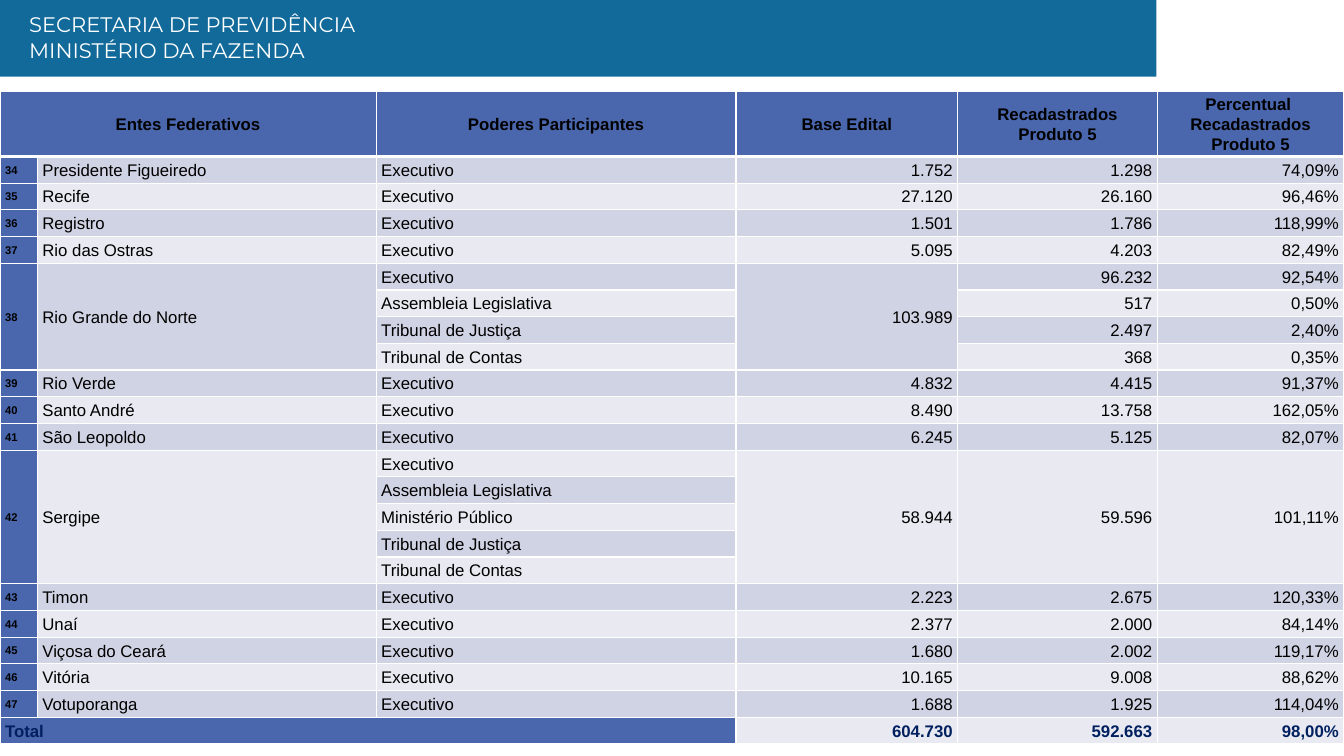
from itertools import product

from lxml import etree
from pptx import Presentation
from pptx import util as u
from pptx.dml.color import RGBColor
from pptx.enum import shapes, text
from pptx.oxml.ns import qn

TEAL = RGBColor(0x12, 0x6A, 0x9B)
BLUE = RGBColor(0x4A, 0x66, 0xAC)
DARK_BAND = RGBColor(0xD0, 0xD3, 0xE3)
LIGHT_BAND = RGBColor(0xE9, 0xEA, 0xF1)
NAVY = RGBColor(0x00, 0x20, 0x60)
BLACK = RGBColor(0, 0, 0)
WHITE = RGBColor(0xFF, 0xFF, 0xFF)

LEFT, CENTER, RIGHT = text.PP_ALIGN.LEFT, text.PP_ALIGN.CENTER, text.PP_ALIGN.RIGHT

FIRST_NUMBER = 34
EXEC, ASSEMBLY = "Executivo", "Assembleia Legislativa"
JUSTICE, ACCOUNTS = "Tribunal de Justiça", "Tribunal de Contas"
HEADINGS = ["Entes Federativos", None, "Poderes Participantes", "Base Edital",
            "Recadastrados\nProduto 5", "Percentual \nRecadastrados\nProduto 5"]
# Name, powers, base, registered, percentage; a single value spans all the powers.
ENTITIES = [
    ("Presidente Figueiredo", [EXEC], ["1.752"], ["1.298"], ["74,09%"]),
    ("Recife", [EXEC], ["27.120"], ["26.160"], ["96,46%"]),
    ("Registro", [EXEC], ["1.501"], ["1.786"], ["118,99%"]),
    ("Rio das Ostras", [EXEC], ["5.095"], ["4.203"], ["82,49%"]),
    ("Rio Grande do Norte", [EXEC, ASSEMBLY, JUSTICE, ACCOUNTS], ["103.989"],
     ["96.232", "517", "2.497", "368"], ["92,54%", "0,50%", "2,40%", "0,35%"]),
    ("Rio Verde", [EXEC], ["4.832"], ["4.415"], ["91,37%"]),
    ("Santo André", [EXEC], ["8.490"], ["13.758"], ["162,05%"]),
    ("São Leopoldo", [EXEC], ["6.245"], ["5.125"], ["82,07%"]),
    ("Sergipe", [EXEC, ASSEMBLY, "Ministério Público", JUSTICE, ACCOUNTS],
     ["58.944"], ["59.596"], ["101,11%"]),
    ("Timon", [EXEC], ["2.223"], ["2.675"], ["120,33%"]),
    ("Unaí", [EXEC], ["2.377"], ["2.000"], ["84,14%"]),
    ("Viçosa do Ceará", [EXEC], ["1.680"], ["2.002"], ["119,17%"]),
    ("Vitória", [EXEC], ["10.165"], ["9.008"], ["88,62%"]),
    ("Votuporanga", [EXEC], ["1.688"], ["1.925"], ["114,04%"]),
]
TOTALS = ["Total", None, None, "604.730", "592.663", "98,00%"]
COLUMN_SHARES = [2.78, 25.21, 26.78, 16.5, 14.85, 13.88]
HEADER_SHARE = 8.53


class Deck:
    """Slide under construction; lengths are percentages of its size."""

    title_font, table_font = "Montserrat", "Arial"

    def __init__(self):
        self.prs = Presentation()
        self.prs.slide_width, self.prs.slide_height = u.Inches(13.33), u.Inches(7.5)
        self.slide = self.prs.slides.add_slide(self.prs.slide_layouts[6])

    def x(self, share):
        return u.Emu(round(self.prs.slide_width * share / 100))

    def y(self, share):
        return u.Emu(round(self.prs.slide_height * share / 100))

    def box(self, left, top, width, height):
        return self.x(left), self.y(top), self.x(width), self.y(height)

    def bar(self, *place, color):
        sp = self.slide.shapes.add_shape(shapes.MSO_SHAPE.RECTANGLE, *self.box(*place))
        sp.shadow.inherit = False
        sp.fill.solid()
        sp.fill.fore_color.rgb = color
        sp.line.fill.background()

    def title(self, *place, content):
        tf = self.slide.shapes.add_textbox(*self.box(*place)).text_frame
        tf.word_wrap = True
        tf.text = content
        for p in tf.paragraphs:
            self.style_runs(p, self.title_font, 15, WHITE)

    def style_runs(self, p, font, size, color, bold=False):
        for r in p.runs:
            r.font.name, r.font.size, r.font.bold = font, u.Pt(size), bold
            r.font.color.rgb = color
        for br in p._p.findall(qn("a:br")):
            etree.SubElement(br, qn("a:rPr"), sz=str(size * 100))

    def table(self, top, height, header, columns, row_count):
        frame = self.slide.shapes.add_table(
            row_count, len(columns), *self.box(0, top, 100, height))
        table = frame.table
        table.first_row = table.horz_banding = False
        for column, share in zip(table.columns, columns):
            column.width = self.x(share)
        body_row = (height - header) / (row_count - 1)
        for i, row in enumerate(table.rows):
            row.height = self.y(body_row if i else header)
        for i, j in product(range(row_count), range(len(columns))):
            cell = table.cell(i, j)
            self.borders(cell, top=3 if i == 1 else 1, bottom=1 if i else 3)
            cell.fill.solid()
            heading = i == 0 or j == 0
            cell.fill.fore_color.rgb = BLUE if heading else DARK_BAND if i % 2 else LIGHT_BAND
            cell.vertical_anchor = text.MSO_ANCHOR.MIDDLE
            cell.margin_left = cell.margin_right = u.Inches(0.05)
            cell.margin_top = cell.margin_bottom = 0
        return table

    def borders(self, cell, top, bottom):
        tc_pr = cell._tc.get_or_add_tcPr()
        for side, points in (("L", 1), ("R", 1), ("T", top), ("B", bottom)):
            ln = etree.SubElement(tc_pr, qn(f"a:ln{side}"), w=str(u.Pt(points)))
            fill = etree.SubElement(ln, qn("a:solidFill"))
            etree.SubElement(fill, qn("a:srgbClr"), val=str(WHITE))

    def cell_text(self, cell, content, align=LEFT, size=12, color=BLACK, bold=False):
        p = cell.text_frame.paragraphs[0]
        p.text = content.replace("\n", "\v")
        p.alignment = align
        p.line_spacing = 1.07
        self.style_runs(p, self.table_font, size, color, bold)


def fill_entities(deck, table):
    row = 1
    for number, (name, powers, *figures) in enumerate(ENTITIES, FIRST_NUMBER):
        last = row + len(powers) - 1
        for j, values in enumerate([[str(number)], [name], powers, *figures]):
            if len(values) < len(powers):
                table.cell(row, j).merge(table.cell(last, j))
            for i, value in enumerate(values, row):
                deck.cell_text(table.cell(i, j), value, align=RIGHT if j > 2 else LEFT,
                               size=12 if j else 8, bold=j == 0)
        row = last + 1


def main():
    deck = Deck()
    deck.bar(0, 0, 86.05, 10.13, color=TEAL)
    deck.title(1.43, 0.93, 57.46, 8.13,
               content="SECRETARIA DE PREVIDÊNCIA\nMINISTÉRIO DA FAZENDA")

    total_row = 1 + sum(len(powers) for _, powers, *_ in ENTITIES)
    table = deck.table(12.13, 86.27, HEADER_SHARE, COLUMN_SHARES, total_row + 1)
    table.cell(0, 0).merge(table.cell(0, 1))
    table.cell(total_row, 0).merge(table.cell(total_row, 2))
    for j, (heading, total) in enumerate(zip(HEADINGS, TOTALS)):
        if heading:
            deck.cell_text(table.cell(0, j), heading, align=CENTER, bold=True)
        if total:
            deck.cell_text(table.cell(total_row, j), total, align=RIGHT if j else LEFT,
                           color=NAVY, bold=True)
    fill_entities(deck, table)
    deck.prs.save("out.pptx")


if __name__ == "__main__":
    main()
